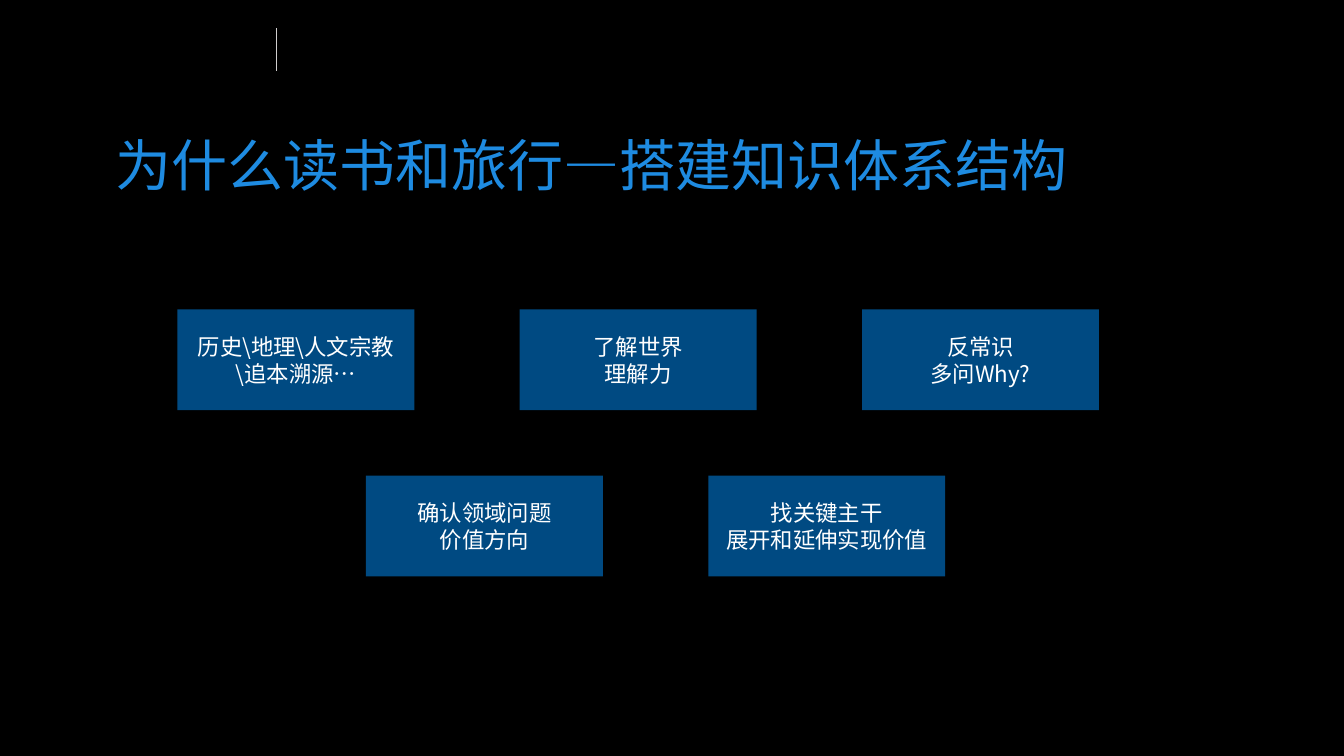
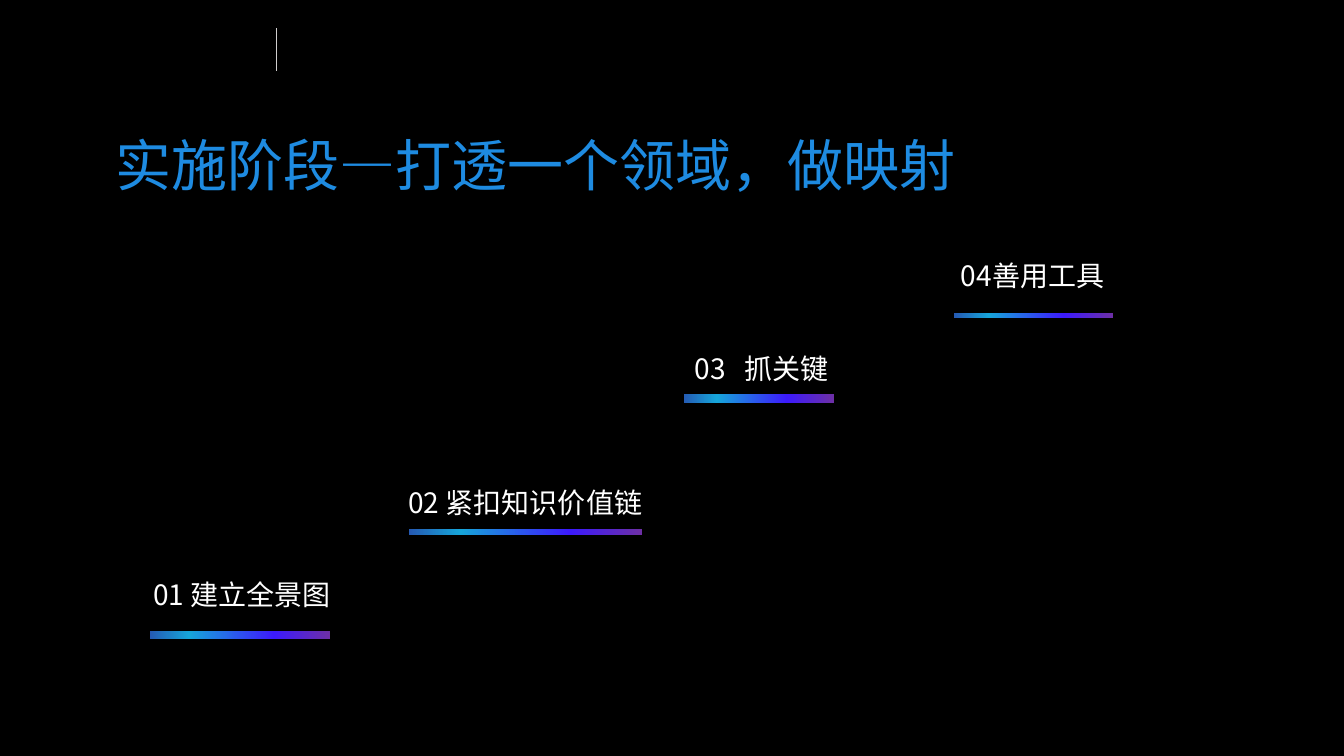
"""Build two dark slides on reading, travel and mastering a field."""
from lxml.etree import SubElement
from pptx import Presentation
from pptx.dml.color import RGBColor
from pptx.enum.shapes import MSO_CONNECTOR, MSO_SHAPE
from pptx.enum.text import MSO_ANCHOR, PP_ALIGN
from pptx.oxml.ns import qn
from pptx.util import Inches, Pt

BLACK = RGBColor(0x00, 0x00, 0x00)
WHITE = RGBColor(0xFF, 0xFF, 0xFF)
TITLE_BLUE = RGBColor(0x1E, 0x8B, 0xE1)
CARD_BLUE = RGBColor(0x00, 0x4A, 0x82)
RULE_GREY = RGBColor(0xD0, 0xCE, 0xCE)
BAR_STOPS = (
    (0, RGBColor(0x25, 0x5A, 0xB3)),
    (22, RGBColor(0x16, 0xA5, 0xDA)),
    (69, RGBColor(0x3C, 0x1A, 0xFC)),
    (100, RGBColor(0x6D, 0x2F, 0xA6)),
)
TITLE_FONT = "Noto Sans CJK JP"
CARD_FONT = "Noto Sans CJK SC"

TITLES = ("为什么读书和旅行—搭建知识体系结构", "实施阶段—打透一个领域，做映射")

CARD_LEFT, CARD_TOP, CARD_WIDTH, CARD_HEIGHT = 13.2, 40.93, 17.63, 13.33
COLUMN_STEP, ROW_STEP, ROW_INDENT = 25.47, 22, 14.03
CARD_ROWS = (
    (("历史\\地理\\人文宗教\\追本溯源…",), ("了解世界", "理解力"), ("反常识", "多问Why?")),
    (("确认领域问题", "价值方向"), ("找关键主干", "展开和延伸实现价值")),
)

LABEL_WIDTH, LABEL_HEIGHT = 20, 6.6
STEPS = (
    ("01 建立全景图", (11.18, 75.6), (11.14, 83.53, 13.43, 1.07)),
    ("02 紧扣知识价值链", (30.16, 63.33), (30.45, 69.93, 17.33, 0.8)),
    ("03\t抓关键", (51.46, 45.6), (50.86, 52.13, 11.18, 1.2)),
    ("04善用工具", (71.27, 33.33), (71, 41.4, 11.85, 0.67)),
)

deck = Presentation()
deck.slide_width = Inches(13.33)
deck.slide_height = Inches(7.5)


def share(left, top, width, height):
    """Turn percentages of the slide into lengths."""
    across, down = deck.slide_width / 100, deck.slide_height / 100
    return int(left * across), int(top * down), int(width * across), int(height * down)


def write(shape, lines, font, size, color, inset, spacing=None):
    """Fill a shape with paragraphs of one style."""
    frame = shape.text_frame
    frame.word_wrap = True
    frame.margin_left = frame.margin_right = Inches(inset)
    frame.margin_top = frame.margin_bottom = Inches(inset)
    frame.text = "\n".join(lines)
    for para in frame.paragraphs:
        if spacing:
            para.line_spacing = spacing
        properties = para._p.get_or_add_pPr()
        tabs = SubElement(properties, qn("a:tabLst"))
        SubElement(tabs, qn("a:tab"), pos=str(Inches(0.49)), algn="l")
        para.font.name = font
        para.font.size = Pt(size)
        para.font.color.rgb = color
        SubElement(properties.find(qn("a:defRPr")), qn("a:ea"), typeface=font)


pages = []
for title in TITLES:
    page = deck.slides.add_slide(deck.slide_layouts[6])
    page.background.fill.solid()
    page.background.fill.fore_color.rgb = BLACK
    left, top, width, height = share(20.55, 3.73, 0, 5.6)
    rule = page.shapes.add_connector(
        MSO_CONNECTOR.STRAIGHT, left, top, left + width, top + height
    )
    rule.line.color.rgb = RULE_GREY
    rule.line.width = Pt(0.75)
    SubElement(rule._element.spPr, qn("a:effectLst"))
    box = page.shapes.add_textbox(*share(8.55, 17.07, 83.95, 11.6))
    write(box, [title], TITLE_FONT, 40, TITLE_BLUE, 0.01)
    pages.append(page)

reasons, stages = pages

for row, cards in enumerate(CARD_ROWS):
    for column, lines in enumerate(cards):
        card = reasons.shapes.add_shape(
            MSO_SHAPE.RECTANGLE,
            *share(
                CARD_LEFT + row * ROW_INDENT + column * COLUMN_STEP,
                CARD_TOP + row * ROW_STEP,
                CARD_WIDTH,
                CARD_HEIGHT,
            ),
        )
        card.shadow.inherit = False
        card.fill.solid()
        card.fill.fore_color.rgb = CARD_BLUE
        card.line.fill.background()
        write(card, lines, CARD_FONT, 16, WHITE, 0.1)
        card.text_frame.vertical_anchor = MSO_ANCHOR.MIDDLE
        for para in card.text_frame.paragraphs:
            para.alignment = PP_ALIGN.CENTER

for label, corner, bar_share in STEPS:
    bar = stages.shapes.add_shape(MSO_SHAPE.RECTANGLE, *share(*bar_share))
    bar.shadow.inherit = False
    bar.line.fill.background()
    bar.fill.gradient()
    bar.fill.gradient_angle = 0
    stops = bar._element.spPr.find(qn("a:gradFill")).find(qn("a:gsLst"))
    stops.clear()
    for position, color in BAR_STOPS:
        stop = SubElement(stops, qn("a:gs"), pos=str(position * 1000))
        SubElement(stop, qn("a:srgbClr"), val=str(color))
    box = stages.shapes.add_textbox(*share(*corner, LABEL_WIDTH, LABEL_HEIGHT))
    write(box, [label], TITLE_FONT, 20, WHITE, 0.03, 1.1)

deck.save("out.pptx")
